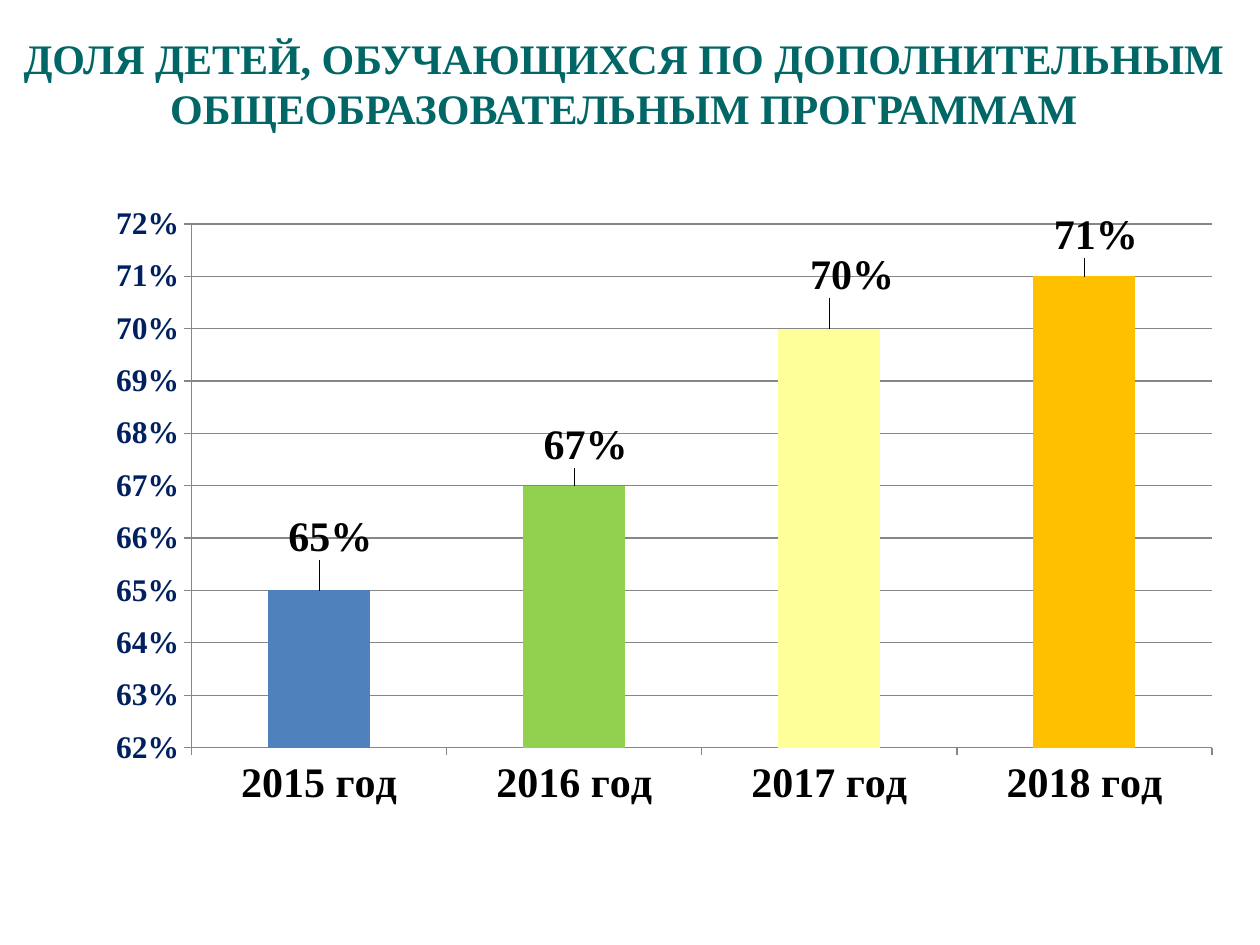
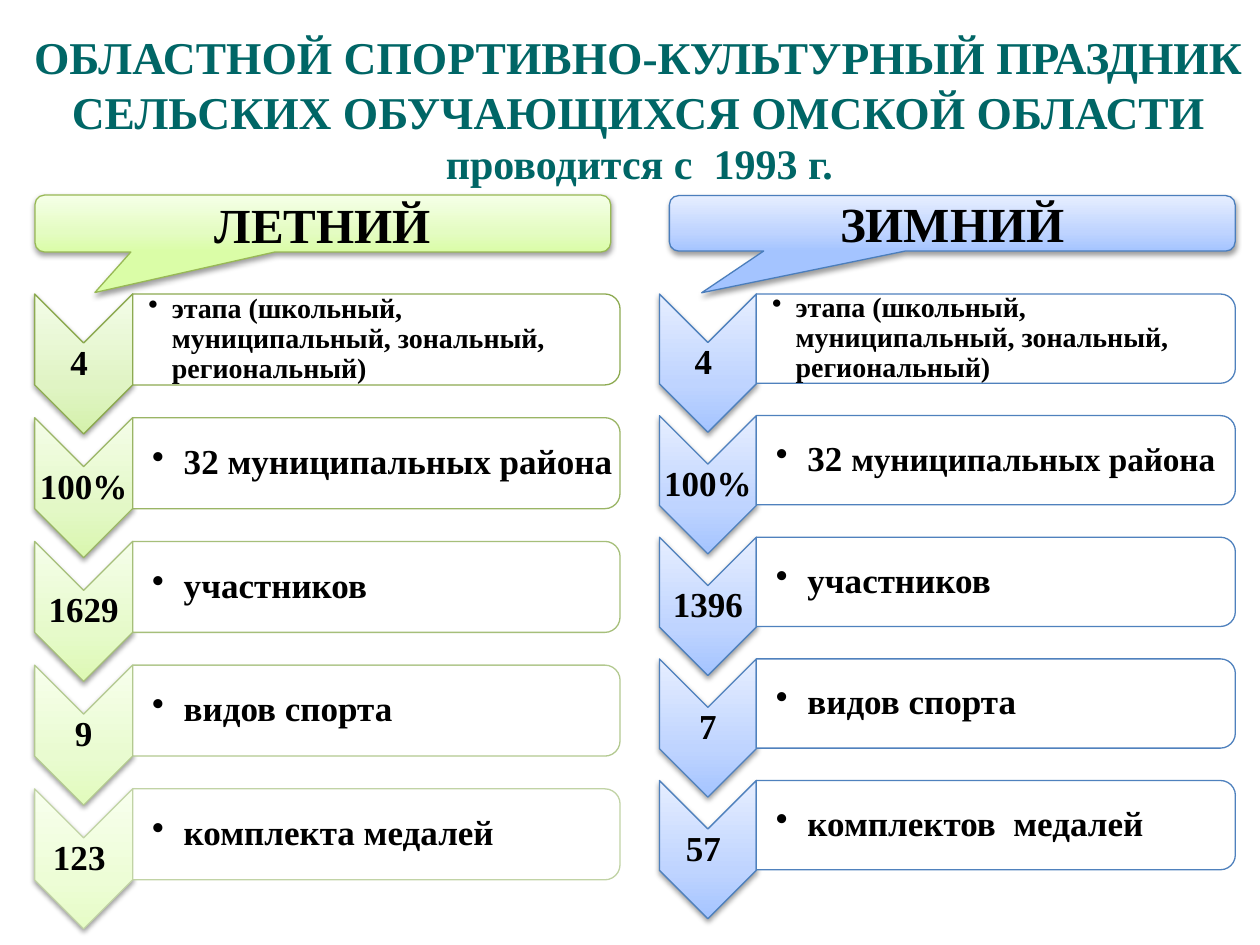
import pptx
import pptx.chart.data
import pptx.dml.color
import pptx.enum.chart
import pptx.enum.shapes
import pptx.enum.text
import pptx.oxml
import pptx.oxml.ns
import pptx.util

Pt = pptx.util.Pt
qn = pptx.oxml.ns.qn
SHAPE = pptx.enum.shapes.MSO_SHAPE
ALIGN = pptx.enum.text.PP_ALIGN
ANCHOR = pptx.enum.text.MSO_ANCHOR

COLORS = {
    "title": "006666", "text": "000000", "axis": "002060", "grid": "868686",
    "panel": "FFFFFF", "summer": "98B955", "winter": "4B7EBC", "winter_row": "4F81BD",
}
BARS = ["4F81BD", "92D050", "FFFF99", "FFC000"]
BLUE = ["A4C4FF", "BFD4FF", "E6EEFF"]
GREEN = ["DAFDA7", "E4FCC2", "F5FFE7"]
GREEN_ROWS = [
    ("8DAA51", ["D4F1AB", "E0F4C4", "F3FCE8"]),
    ("9AB565", ["D9F6AE", "E3F8C6", "F4FDE8"]),
    ("A6BF7A", ["DDF9B4", "E6FACA", "F5FEEA"]),
    ("B3C990", ["E1FBBC", "E9FBD0", "F7FFEC"]),
    ("C1D3A5", ["E6FCC6", "EDFDD6", "F8FFEE"]),
]
STAGES = "этапа (школьный, муниципальный, зональный, региональный)"


def rgb(color):
    return pptx.dml.color.RGBColor.from_string(COLORS.get(color, color))


def xml(markup):
    """Make one element from markup whose root tag carries %s for the namespaces."""
    return pptx.oxml.parse_xml(markup % pptx.oxml.ns.nsdecls("a", "c"))


def chart_layout(**values):
    items = "".join(f'<c:{k} val="{v}"/>' for k, v in values.items())
    return xml(f"<c:layout %s><c:manualLayout>{items}</c:manualLayout></c:layout>")


class Deck:
    FONT = "Times New Roman"

    def __init__(self):
        self.prs = pptx.Presentation()
        self.prs.slide_width, self.prs.slide_height = Pt(720), Pt(540)
        self.s = None

    def slide(self):
        self.s = self.prs.slides.add_slide(self.prs.slide_layouts[6])

    def set_font(self, font, size, color="text"):
        for name, value in {"name": self.FONT, "size": Pt(size), "bold": True}.items():
            setattr(font, name, value)
        font.color.rgb = rgb(color)

    def set_text(self, sp, runs, color="text", anchor=ANCHOR.MIDDLE, insets=None, bullet=0):
        """Fill a shape with one paragraph of (text, size) runs; bullet is the hanging indent."""
        tf = sp.text_frame
        tf.word_wrap, tf.vertical_anchor = True, anchor
        if insets:
            for side, value in zip(("left", "top", "right", "bottom"), insets):
                setattr(tf, f"margin_{side}", Pt(value))
        p = tf.paragraphs[0]
        p.alignment = ALIGN.LEFT if bullet else ALIGN.CENTER
        if bullet:
            pPr = p._p.get_or_add_pPr()
            pPr.set("marL", str(Pt(bullet)))
            pPr.set("indent", str(-Pt(bullet)))
            pPr.append(xml('<a:buChar %s char="•"/>'))
        if insets:
            p.line_spacing = 0.9
        for text, size in runs:
            r = p.add_run()
            r.text = text
            self.set_font(r.font, size, color)

    def text(self, box, runs, **style):
        sp = self.s.shapes.add_textbox(*map(Pt, box))
        self.set_text(sp, runs, **style)

    def title(self, box, text, size, anchor=ANCHOR.MIDDLE):
        self.text(box, [(text, size)], color="title", anchor=anchor)

    def shape(self, kind, box, line, gradient=None, turned=False):
        """Add a preset shape; box is where it shows, also when turned by 90 degrees."""
        x, y, w, h = box
        if turned:
            x, y, w, h = x + (w - h) / 2, y + (h - w) / 2, h, w
        sp = self.s.shapes.add_shape(kind, *map(Pt, (x, y, w, h)))
        sp.rotation = 90 if turned else 0
        sp.shadow.inherit = False
        sp.line.color.rgb, sp.line.width = rgb(line), Pt(0.75)
        if gradient:
            self.shade(sp, gradient)
        else:
            sp.fill.solid()
            sp.fill.fore_color.rgb = rgb("panel")
        return sp

    def shade(self, sp, gradient):
        """Give a shape an upward three-stop gradient and a soft shadow below."""
        sp.fill.gradient()
        sp.fill.gradient_angle = 90
        spPr = sp.element.spPr
        grad = spPr.find(qn("a:gradFill"))
        grad.set("rotWithShape", "0")
        stops = grad.find(qn("a:gsLst"))
        for stop in list(stops):
            stops.remove(stop)
        for pos, color in zip((0, 35, 100), gradient):
            stops.append(xml(f'<a:gs %s pos="{pos * 1000}"><a:srgbClr val="{color}"/></a:gs>'))
        spPr.find(qn("a:effectLst")).append(xml(
            f'<a:outerShdw %s blurRad="{Pt(3.1)}" dist="{Pt(1.6)}" dir="5400000" rotWithShape="0">'
            '<a:srgbClr val="000000"><a:alpha val="38000"/></a:srgbClr></a:outerShdw>'))

    def callout(self, box, text, line, gradient, tip):
        sp = self.shape(SHAPE.ROUNDED_RECTANGULAR_CALLOUT, box, line, gradient)
        for i, value in enumerate((*tip, 0.167)):
            sp.adjustments[i] = value
        self.set_text(sp, [(text, 28)])

    def row(self, left, top, chevron, panel, look, number, runs):
        """Add a number in a chevron, with its explanation in the panel beside it."""
        line, gradient = look
        chevron_box = (left, top, *chevron)
        panel_box = (left + chevron[0], top, *panel)
        self.shape(SHAPE.CHEVRON, chevron_box, line, gradient, turned=True)
        self.text(chevron_box, [(number, 20)], insets=(1, 1, 1, 1))
        self.shape(SHAPE.ROUND_2_SAME_RECTANGLE, panel_box, line, turned=True)
        size = runs[0][1]
        self.text((*panel_box[:2], panel[0] - 2.5, panel[1]), runs,
                  insets=(size * 0.56, 1, 1, 1), bullet=18 if size == 20 else 13.5)

    def column_chart(self, box, cats, vals, label_shifts):
        data = pptx.chart.data.CategoryChartData(number_format="0%")
        data.categories = cats
        data.add_series("Series 1", vals)
        kind = pptx.enum.chart.XL_CHART_TYPE.COLUMN_CLUSTERED
        chart = self.s.shapes.add_chart(kind, *map(Pt, box), data).chart
        chart.has_legend = chart.has_title = False
        chart.font.name, chart.font.size = "Calibri", Pt(18)
        self.format_axes(chart)
        area = chart._chartSpace.chart.plotArea
        for old in area.findall(qn("c:layout")):
            area.remove(old)
        area.insert(0, chart_layout(layoutTarget="inner", xMode="edge", yMode="edge",
                                    x=0.085, y=0.046, w=0.894, h=0.838))
        plot = chart.plots[0]
        plot.gap_width, plot.vary_by_categories = 150, False
        self.format_bars(plot.series[0], label_shifts)

    def format_axes(self, chart):
        axis = chart.value_axis
        for name, value in {"minimum_scale": 0.62, "maximum_scale": 0.72, "major_unit": 0.01,
                            "has_major_gridlines": True}.items():
            setattr(axis, name, value)
        axis.tick_labels.number_format = "0%"
        axis.tick_labels.number_format_is_linked = False
        self.set_font(axis.tick_labels.font, 18, "axis")
        self.set_font(chart.category_axis.tick_labels.font, 24)
        for part in (axis, chart.category_axis, axis.major_gridlines):
            part.format.line.color.rgb = rgb("grid")
            part.format.line.width = Pt(0.75)

    def format_bars(self, series, label_shifts):
        series.format.fill.solid()
        series.format.fill.fore_color.rgb = rgb(BARS[0])
        labels = series.data_labels
        labels.show_value, labels.number_format = True, "0%"
        labels.number_format_is_linked = False
        self.set_font(labels.font, 24)
        for i, color in enumerate(BARS):
            point = series.points[i]
            point.format.fill.solid()
            point.format.fill.fore_color.rgb = rgb(color)
            self.set_font(point.data_label.font, 24)
            point.data_label.position = pptx.enum.chart.XL_LABEL_POSITION.OUTSIDE_END
        for dLbl, (dx, dy) in zip(labels._element.findall(qn("c:dLbl")), label_shifts):
            dLbl.find(qn("c:idx")).addnext(chart_layout(x=dx, y=dy))


def share_slide(deck):
    deck.slide()
    deck.title((-6.5, 15, 726, 65.5),
               "ДОЛЯ ДЕТЕЙ, ОБУЧАЮЩИХСЯ ПО ДОПОЛНИТЕЛЬНЫМ ОБЩЕОБРАЗОВАТЕЛЬНЫМ ПРОГРАММАМ",
               24, ANCHOR.TOP)
    deck.column_chart((54, 111.6, 652.3, 357.1), [f"{year} год" for year in range(2015, 2019)],
                      (0.65, 0.67, 0.7, 0.71),
                      [(0.01, -0.04), (0.01, -0.02), (0.02, -0.04), (0.01, -0.02)])


def festival_slide(deck):
    deck.slide()
    deck.title((243.4, 65, 244, 56), "проводится с  1993 г.", 24)
    summer = [
        ("4 ", [(STAGES, 16)]),
        ("100%", [("32 муниципальных района", 20)]),
        ("1629", [("участников", 20)]),
        ("9", [("видов спорта", 20)]),
        ("123 ", [("комплекта медалей", 20)]),
    ]
    winter = [
        ("4 ", [(STAGES, 16)]),
        ("100%", [("32 ", 20), ("муниципальных района", 19)]),
        ("1396", [("участников", 20)]),
        ("7", [("видов спорта", 20)]),
        ("57 ", [("комплектов  медалей", 20)]),
    ]
    blue_rows = [(COLORS["winter_row"], BLUE)] * len(winter)
    columns = [
        (19.8, 70.7, (56, 80), (278.5, 52), GREEN_ROWS, summer),
        (376.8, 69.5, (55.4, 79), (273.7, 51), blue_rows, winter),
    ]
    for left, pitch, chevron, panel, looks, rows in columns:
        for i, (look, (number, runs)) in enumerate(zip(looks, rows)):
            deck.row(left, 168 + i * pitch, chevron, panel, look, number, runs)
    deck.callout((20, 111.5, 329, 32.5), "ЛЕТНИЙ", "summer", GREEN, (-0.396, 1.213))
    deck.callout((382.5, 111.8, 323.3, 31.7), "ЗИМНИЙ", "winter", BLUE, (-0.443, 1.253))
    deck.title((-31, 3, 792, 90),
               "ОБЛАСТНОЙ СПОРТИВНО-КУЛЬТУРНЫЙ ПРАЗДНИК СЕЛЬСКИХ ОБУЧАЮЩИХСЯ ОМСКОЙ ОБЛАСТИ", 26)


def main():
    deck = Deck()
    share_slide(deck)
    festival_slide(deck)
    deck.prs.save("out.pptx")


if __name__ == "__main__":
    main()
